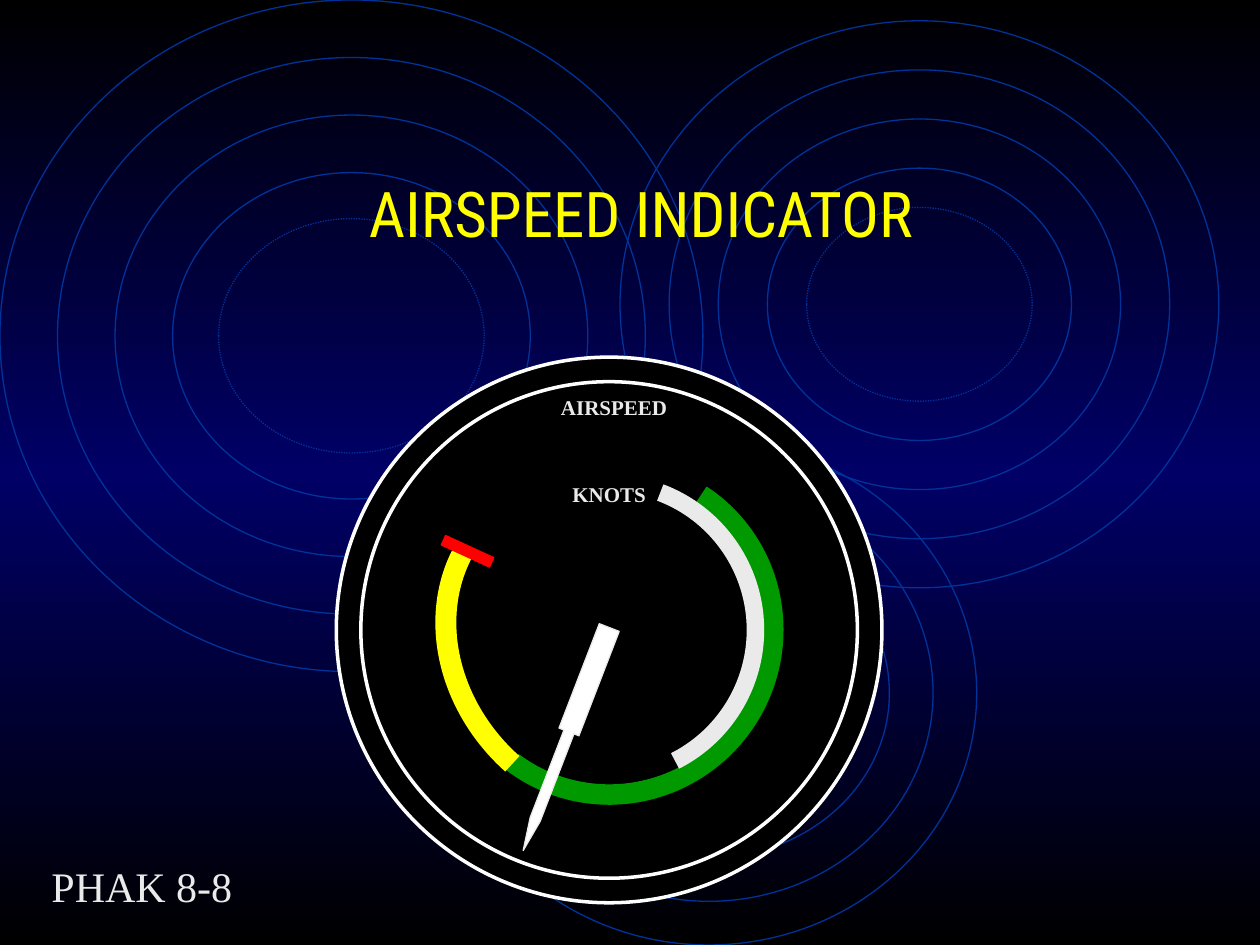
from copy import deepcopy
from math import cos, radians, sin

from pptx import Presentation
from pptx import util as u
from pptx.dml.color import RGBColor
from pptx.enum import dml, shapes, text
from pptx.oxml import ns, parse_xml

COLORS = {
    "night": "000000", "navy": "000066", "ring": "003399", "white": "FFFFFF",
    "pale": "EAEAEA", "yellow": "FFFF00", "green": "009900", "red": "FF0000",
}
SHAPE = shapes.MSO_SHAPE
DEGREE = 60000


def color(name):
    """Return the named colour."""
    return RGBColor.from_string(COLORS[name])


def style(shape, fill=None, line="night", width=0.75):
    """Set fill and outline and remove the shadow."""
    shape.shadow.inherit = False
    if fill:
        shape.fill.solid()
        shape.fill.fore_color.rgb = color(fill)
    else:
        shape.fill.background()
    shape.line.color.rgb = color(line)
    shape.line.width = u.Pt(width)


def add_shape(parent, kind, box, rotation=0, adjust=(), **look):
    """Add a styled preset shape in a box given in centimetres."""
    shape = parent.shapes.add_shape(kind, *map(u.Cm, box))
    shape.rotation = rotation
    for index, value in enumerate(adjust):
        shape.adjustments[index] = value
    style(shape, **look)
    return shape


def write(box, words, size, font="Times New Roman", tint="pale", bold=False):
    """Write one centred line of formatted text from the top of a box."""
    frame = box.text_frame
    frame.word_wrap = True
    frame.vertical_anchor = text.MSO_ANCHOR.TOP
    para = frame.paragraphs[0]
    para.alignment = text.PP_ALIGN.CENTER
    span = para.add_run()
    span.text = words
    span.font.size = u.Pt(size)
    span.font.name = font
    span.font.bold = bold
    span.font.color.rgb = color(tint)


def add_label(page, box, words, size, **look):
    """Add a text box in a box given in centimetres."""
    write(page.shapes.add_textbox(*map(u.Cm, box)), words, size, **look)


def paint_background(page):
    """Shade the page from black to navy and back to black."""
    fill = page.background.fill
    fill.gradient()
    fill.gradient_angle = 90
    first = fill.gradient_stops[0]._gs
    first.addnext(deepcopy(first))
    for stop, name, position in zip(fill.gradient_stops, ("night", "navy", "night"), (0, 0.5, 1)):
        stop.color.rgb = color(name)
        stop.position = position


def add_ripples(page, master, box, step):
    """Add nested rings to the master, the innermost one dotted."""
    left, top, width, height = box
    group = page.shapes.add_group_shape()
    for level in (0, 1, 2, 3, 3.8):
        inset = level * step
        area = (left + inset, top + inset, width - 2 * inset, height - 2 * inset)
        ring = add_shape(group, SHAPE.OVAL, area, line="ring")
        if level == 3.8:
            ring.line.dash_style = dml.MSO_LINE.ROUND_DOT
    master.shapes._spTree.append(group.element)


def add_arc(page, box, center, radii, start, sweep, tint, width, rotation=0):
    """Add a stroked arc whose center is relative to its box, angles clockwise."""
    left, top, wide, high = map(u.Cm, box)
    builder = page.shapes.build_freeform(left, top)
    builder.add_line_segments([(left + wide, top), (left + wide, top + high), (left, top + high)])
    shape = builder.convert_to_shape()
    shape.rotation = rotation
    style(shape, line=tint, width=width)
    middle_x, middle_y, radius_x, radius_y = map(u.Cm, (*center, *radii))
    begin_x = int(middle_x + radius_x * cos(radians(start)))
    begin_y = int(middle_y + radius_y * sin(radians(start)))
    curve = (f'<a:moveTo><a:pt x="{begin_x}" y="{begin_y}"/></a:moveTo>'
             f'<a:arcTo wR="{radius_x}" hR="{radius_y}" '
             f'stAng="{int(start * DEGREE)}" swAng="{int(sweep * DEGREE)}"/>')
    wedge = f'<a:lnTo><a:pt x="{middle_x}" y="{middle_y}"/></a:lnTo><a:close/>'
    size = f'w="{wide}" h="{high}"'
    outline = shape.element.spPr.find(ns.qn("a:custGeom")).find(ns.qn("a:pathLst"))
    outline.getparent().replace(outline, parse_xml(
        f'<a:pathLst {ns.nsdecls("a")}><a:path {size} fill="none">{curve}</a:path>'
        f'<a:path {size} stroke="0">{curve}{wedge}</a:path></a:pathLst>'))


def add_dial(page, box):
    """Add the airspeed dial with its speed ranges, needle and labels."""
    left, top, _, _ = box
    add_shape(page, SHAPE.OVAL, box, fill="night", width=1.5)
    add_shape(page, SHAPE.DONUT, box, adjust=[0.045], fill="night", line="white", width=2)

    half_ring = [178.3 * DEGREE / 100000, 1.8 * DEGREE / 100000, 0.056]
    add_shape(page, SHAPE.BLOCK_ARC, (left + 2.05, top + 2.09, 6.98, 6.89), 125.2, half_ring,
              fill="green", line="green")
    add_arc(page, (left + 1.48, top + 4.23, 3.58, 3.18), (3.58, 0), (3.66, 3.18), 90, 79,
            "yellow", 12, rotation=41.7)
    add_shape(page, SHAPE.RECTANGLE, (left + 2.11, top + 3.81, 1.07, 0.21), 24.7,
              fill="red", line="red")
    add_arc(page, (left + 5.49, top + 2.73, 2.97, 5.41), (0, 2.77), (2.96, 2.96), -69.4, 132.5,
            "pale", 10)

    add_shape(page, SHAPE.DOWN_ARROW_CALLOUT, (left + 4.42, top + 5.29, 0.43, 4.82), 21.1,
              (0.5, 0.25, 1.567, 0.468), fill="white", line="pale")
    add_label(page, (left + 4.01, top + 0.63, 3.18, 0.76), "AIRSPEED", 12, bold=True)
    add_label(page, (left + 3.91, top + 2.39, 3.18, 0.76), "KNOTS", 12, bold=True)


def add_title(page, box, words):
    """Place and fill the title placeholder."""
    title = page.shapes.title
    title.left, title.top, title.width, title.height = map(u.Cm, box)
    write(title, words, 36, font="Roboto Condensed", tint="yellow")


def main():
    """Build and save the deck."""
    deck = Presentation()
    deck.slide_width, deck.slide_height = u.Cm(25.4), u.Cm(19.05)
    page = deck.slides.add_slide(deck.slide_layouts[5])
    paint_background(page)
    add_ripples(page, deck.slide_master, (0, 0, 14.17, 13.54), 1.16)
    add_ripples(page, deck.slide_master, (8.89, 8.89, 10.8, 10.16), 0.88)
    add_ripples(page, deck.slide_master, (12.5, 0.42, 12.07, 11.43), 0.99)
    add_title(page, (1.91, 3.4, 22.02, 3.18), "AIRSPEED INDICATOR")
    add_dial(page, (6.78, 7.2, 11, 11))
    add_label(page, (0, 17.22, 5.72, 1.27), "PHAK 8-8", 24)
    deck.save("out.pptx")


if __name__ == "__main__":
    main()
